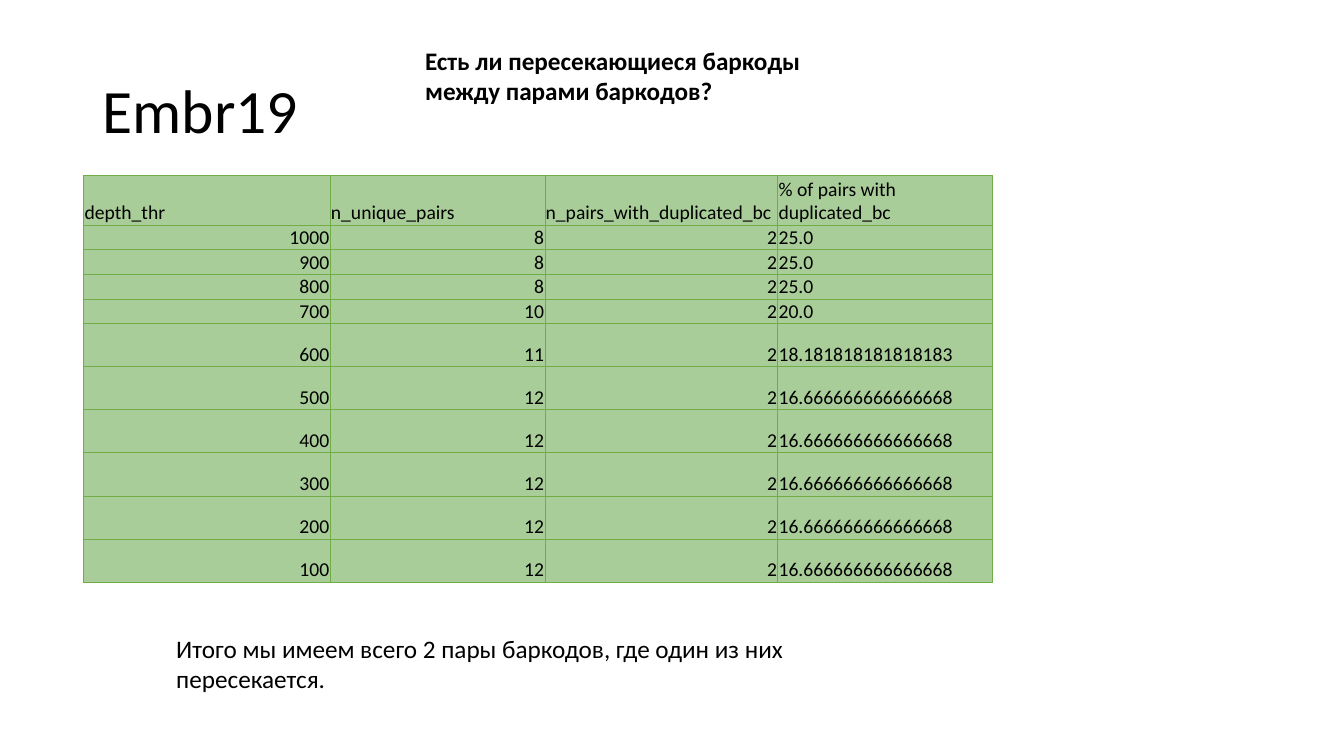
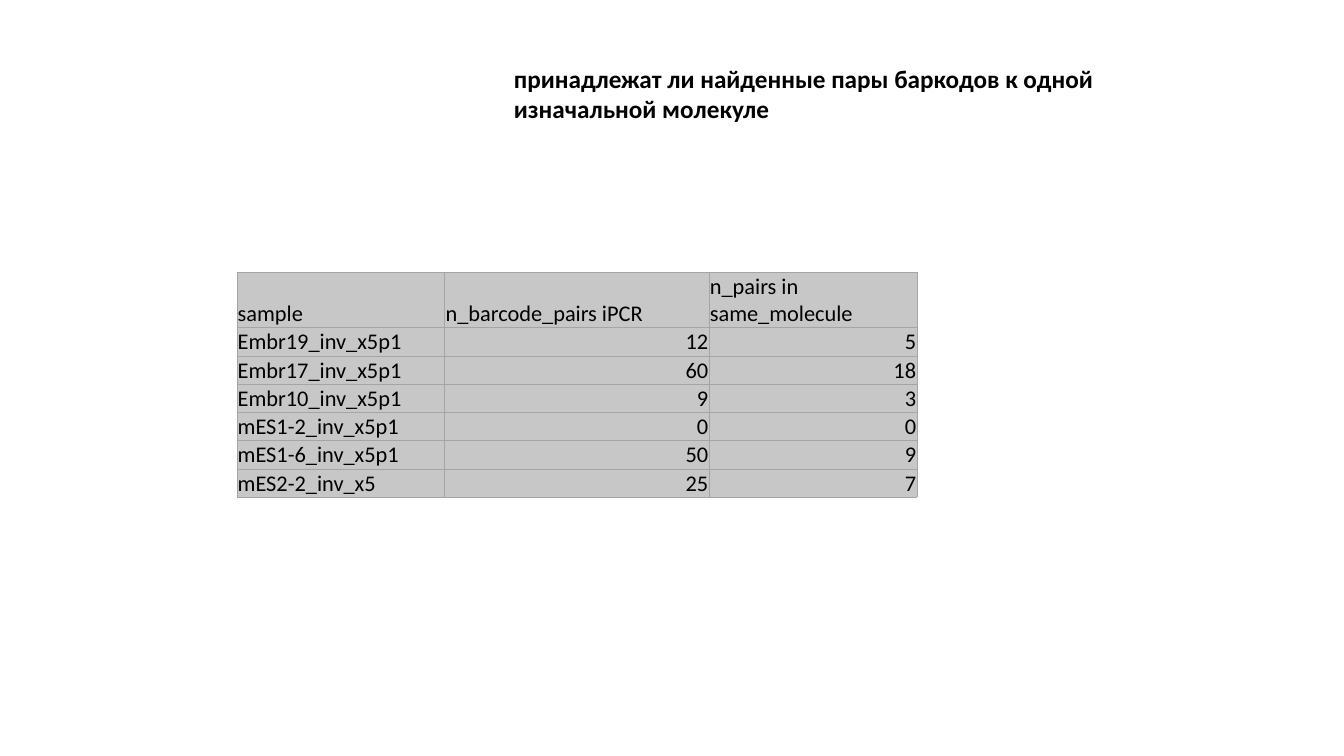
from pptx import Presentation
from pptx import util as u
from pptx.dml.color import RGBColor
from pptx.enum import text as t
from pptx.oxml import parse_xml
from pptx.oxml.ns import nsdecls

Pt = u.Pt


def tint(hue):
    return RGBColor.from_string(hue)


class Deck:
    """Holds the shared style and the current slide."""

    font, ink = "Calibri", "000000"

    def __init__(self):
        self.prs = Presentation()
        self.prs.slide_width, self.prs.slide_height = Pt(960), Pt(540)

    def page(self):
        self.slide = self.prs.slides.add_slide(self.prs.slide_layouts[6])

    def run(self, para, words, size, bold=False):
        run = para.add_run()
        run.text = words
        run.font.name, run.font.size, run.font.bold = self.font, Pt(size), bold
        run.font.color.rgb = tint(self.ink)

    def label(self, box, words, size=18, bold=False):
        frame = self.slide.shapes.add_textbox(*map(Pt, box)).text_frame
        frame.word_wrap = True
        self.run(frame.paragraphs[0], words, size, bold)
        return frame

    def title(self, words):
        frame = self.label((66.2, 28.8, 828, 104.4), words, 44)
        frame.vertical_anchor = t.MSO_ANCHOR.MIDDLE
        frame.paragraphs[0].line_spacing = 0.9

    def edge(self, cell, line):
        props = cell._tc.get_or_add_tcPr()
        for side in "LRTB":
            props.append(parse_xml(
                f'<a:ln{side} {nsdecls("a")} w="{Pt(0.5)}"><a:solidFill>'
                f'<a:srgbClr val="{line}"/></a:solidFill></a:ln{side}>'))

    def cell(self, cell, words, size, line, fill, right):
        self.edge(cell, line)
        cell.fill.solid()
        cell.fill.fore_color.rgb = tint(fill)
        cell.margin_left = cell.margin_right = cell.margin_top = Pt(0.6)
        cell.margin_bottom = 0
        cell.vertical_anchor = t.MSO_ANCHOR.BOTTOM
        para = cell.text_frame.paragraphs[0]
        if right:
            para.alignment = t.PP_ALIGN.RIGHT
        self.run(para, words, size)

    def table(self, left, top, cols, highs, rows, size, line, fill, text_col):
        grid = self.slide.shapes.add_table(
            len(rows), len(cols), Pt(left), Pt(top), Pt(sum(cols)), Pt(sum(highs))).table
        grid.first_row = grid.horz_banding = False
        for col, wide in zip(grid.columns, cols):
            col.width = Pt(wide)
        for r, (row, high) in enumerate(zip(rows, highs)):
            grid.rows[r].height = Pt(high)
            for c, words in enumerate(row):
                self.cell(grid.cell(r, c), words, size, line, fill, r > 0 and c != text_col)

    def save(self):
        self.prs.save("out.pptx")


DEPTH = [
    ("depth_thr", "n_unique_pairs", "n_pairs_with_duplicated_bc", "% of pairs with duplicated_bc"),
    ("1000", "8", "2", "25.0"),
    ("900", "8", "2", "25.0"),
    ("800", "8", "2", "25.0"),
    ("700", "10", "2", "20.0"),
    ("600", "11", "2", "18.181818181818183"),
    *((str(thr), "12", "2", "16.666666666666668") for thr in range(500, 0, -100)),
]

SAMPLES = [
    ("sample", "n_barcode_pairs iPCR", "n_pairs in same_molecule"),
    ("Embr19_inv_x5p1", "12", "5"),
    ("Embr17_inv_x5p1", "60", "18"),
    ("Embr10_inv_x5p1", "9", "3"),
    ("mES1-2_inv_x5p1", "0", "0"),
    ("mES1-6_inv_x5p1", "50", "9"),
    ("mES2-2_inv_x5", "25", "7"),
]


def main():
    deck = Deck()

    deck.page()
    deck.title("Embr19")
    deck.table(59.8, 125.3, [176, 153.4, 166.4, 153.4], [35.5] + [17.6] * 4 + [30.8] * 6,
               DEPTH, 14, "70AD47", "A9CD99", text_col=3)
    deck.label((118.8, 448.6, 458, 51),
               "Итого мы имеем всего 2 пары баркодов, где один из них пересекается.")
    deck.label((296.6, 28.8, 337, 51),
               "Есть ли пересекающиеся баркоды между парами баркодов?", bold=True)

    deck.page()
    deck.table(169.2, 194.4, [148.5, 188.8, 148.5], [39.6] + [20.2] * 6,
               SAMPLES, 16, "A5A5A5", "C7C7C7", text_col=0)
    deck.label((360, 41.8, 480, 51),
               "принадлежат ли найденные пары баркодов к одной изначальной молекуле", bold=True)

    deck.save()


if __name__ == "__main__":
    main()
